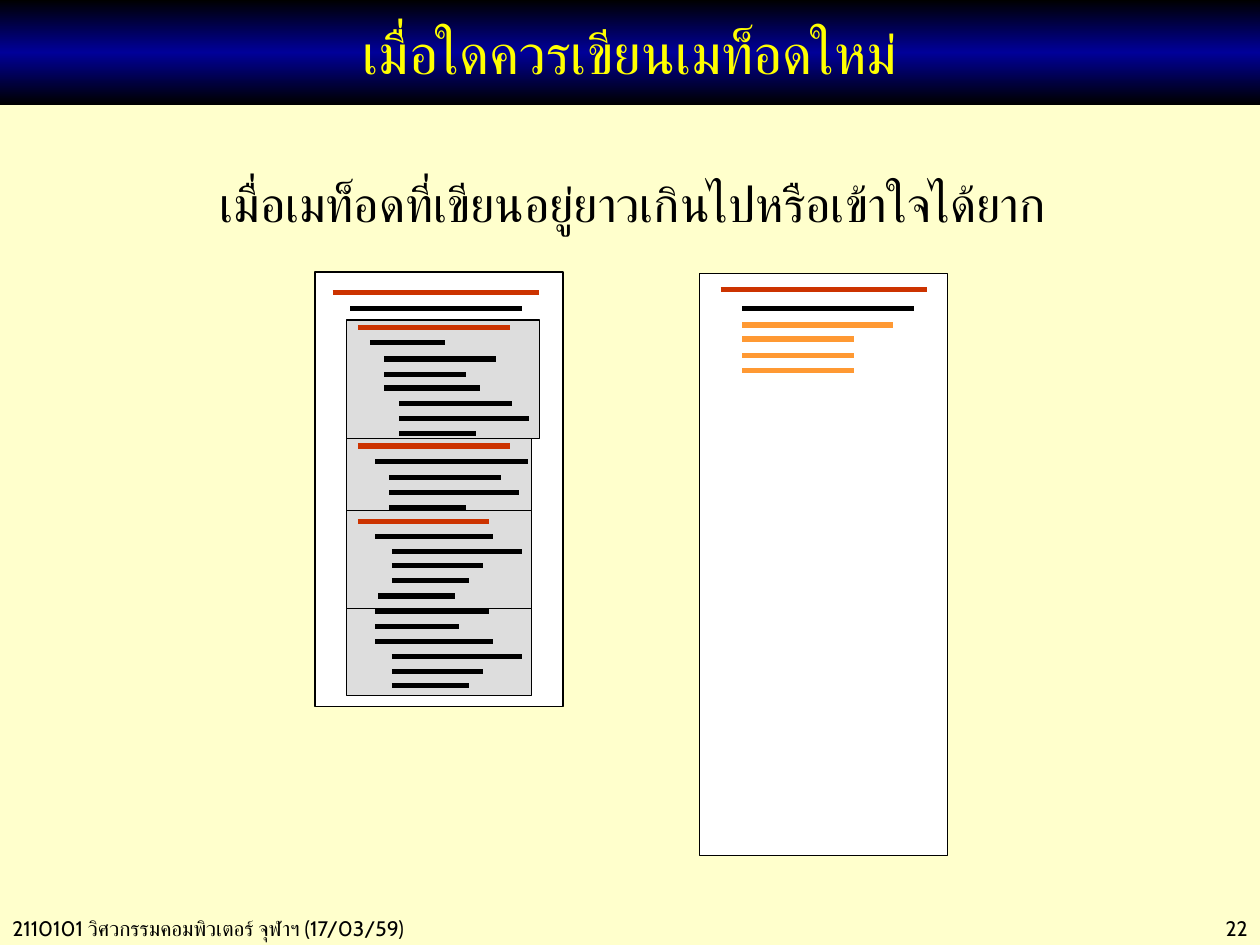
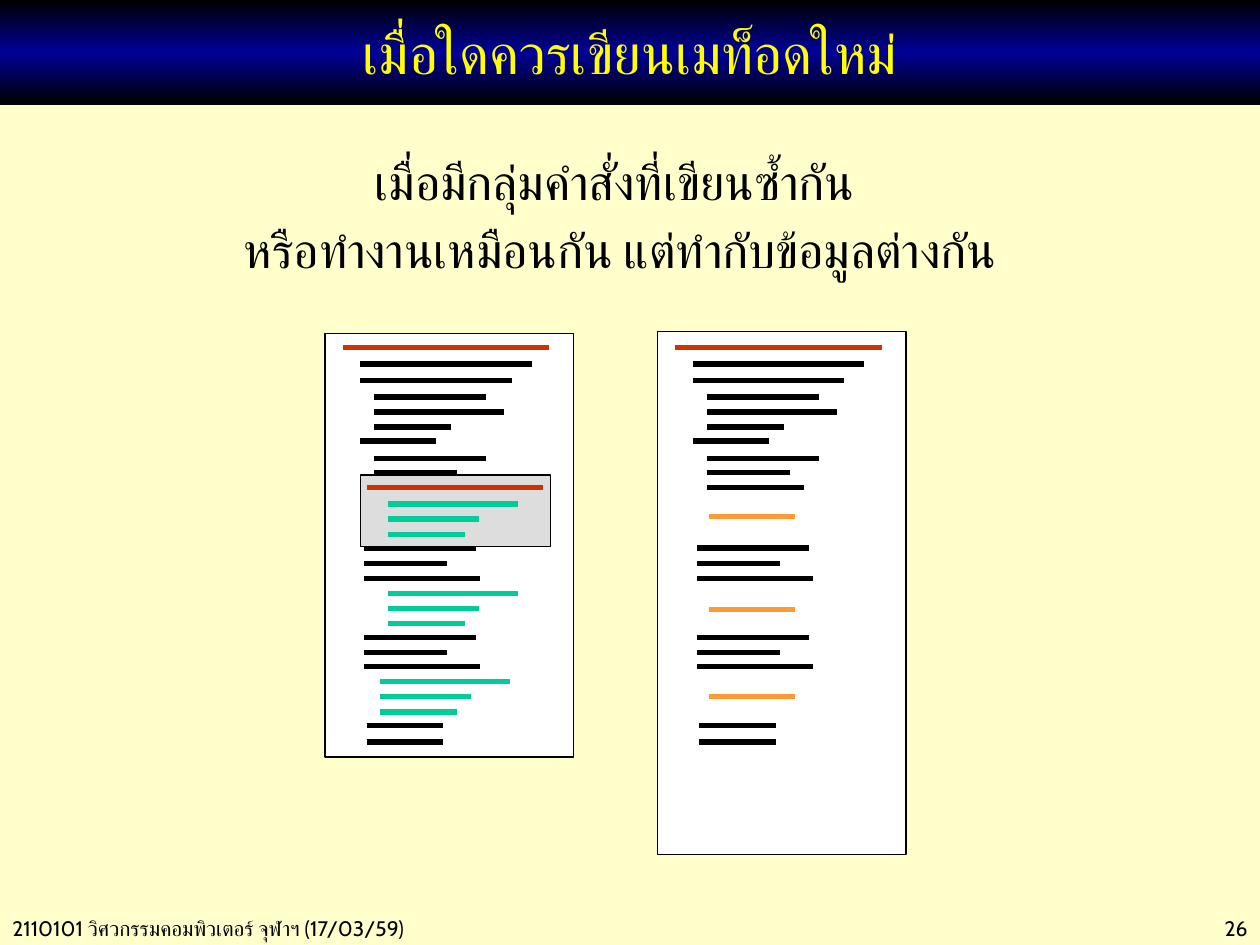
"""Build two slides on when to write a new method."""
from copy import deepcopy
from dataclasses import dataclass

from lxml.etree import SubElement
from pptx import Presentation
from pptx.dml.color import RGBColor
from pptx.enum.shapes import MSO_CONNECTOR, MSO_SHAPE
from pptx.enum.text import MSO_ANCHOR, PP_ALIGN
from pptx.oxml.ns import qn
from pptx.util import Emu, Pt

PX = 9144


@dataclass(frozen=True)
class Theme:
    font: str = "Cabin"
    title_size: int = 32
    body_size: int = 28
    footer_size: int = 12
    ground: str = "FFFFCC"
    title: str = "FFFF00"
    band_edge: str = "000000"
    band_middle: str = "000099"
    paper: str = "FFFFFF"
    block: str = "DDDDDD"
    code: str = "000000"
    header: str = "CC3300"
    call: str = "FF9933"
    repeat: str = "00CC99"


T = Theme()


def write(tf, lines, size, color, align):
    tf.word_wrap = True
    for i, text in enumerate(lines):
        p = tf.add_paragraph() if i else tf.paragraphs[0]
        p.alignment = align
        if i:
            p.space_before = Pt(size * 0.2)
        r = p.add_run()
        r.text = text
        r.font.name = T.font
        r.font.size = Pt(size)
        r.font.color.rgb = RGBColor.from_string(color)
        SubElement(r.font._element, qn("a:cs"), typeface=T.font)


def draw_code(s, box, fill, rows):
    sp = s.shapes.add_shape(MSO_SHAPE.RECTANGLE, *[Emu(v * PX) for v in box])
    sp.shadow.inherit = False
    sp.fill.solid()
    sp.fill.fore_color.rgb = RGBColor.from_string(fill)
    sp.line.color.rgb = RGBColor.from_string(T.code)
    sp.line.width = Pt(0.75)
    for color, bars in rows.items():
        for x, y, w in bars:
            ends = [Emu(v * PX) for v in (x, y, x + w, y)]
            c = s.shapes.add_connector(MSO_CONNECTOR.STRAIGHT, *ends)
            c.line.color.rgb = RGBColor.from_string(color)
            c.line.width = Pt(3)
            SubElement(c._element.spPr, qn("a:effectLst"))


long_method = [
    ((555, 217, 197, 462), T.paper, {
        T.header: [(572, 230, 164)],
        T.code: [(589, 245, 136)],
        T.call: [(589, 258, 120), (589, 269, 89), (589, 282, 89), (589, 294, 89)],
    }),
    ((250, 216, 197, 345), T.paper, {
        T.header: [(264, 232, 164)],
        T.code: [(278, 245, 136)],
    }),
    ((275, 345, 147, 70), T.block, {
        T.header: [(284, 354, 121)],
        T.code: [(298, 366, 121), (309, 379, 89), (309, 391, 103), (309, 403, 61)],
    }),
    ((275, 254, 153, 94), T.block, {
        T.header: [(284, 260, 121)],
        T.code: [(294, 272, 59), (305, 285, 89), (305, 297, 65), (305, 308, 76),
                 (317, 320, 89), (317, 332, 103), (317, 344, 61)],
    }),
    ((275, 464, 147, 88), T.block, {
        T.code: [(298, 485, 90), (298, 497, 66), (298, 509, 93),
                 (311, 521, 103), (311, 533, 72), (311, 544, 61)],
    }),
    ((275, 405, 147, 78), T.block, {
        T.header: [(284, 414, 104)],
        T.code: [(298, 426, 93), (311, 438, 103), (311, 449, 72),
                 (311, 461, 61), (300, 473, 61)],
    }),
]

shared_header = (272, 276, 164)
shared_code = [
    (286, 289, 136), (286, 302, 120), (297, 315, 89), (297, 327, 103),
    (297, 339, 61), (286, 350, 60), (297, 364, 89), (297, 375, 66),
    (289, 435, 89), (289, 447, 66), (289, 459, 92),
    (289, 506, 89), (289, 518, 66), (289, 529, 92),
    (291, 576, 61), (291, 589, 61),
]
page_step = 264
repeats = [[(x, y + i * 12, w) for i, w in enumerate((103, 72, 61))]
           for x, y in ((308, 400), (308, 471), (302, 541))]
repeated_code = [
    ((258, 265, 197, 336), T.paper, {
        T.header: [shared_header],
        T.code: shared_code,
        T.repeat: repeats[1] + repeats[2],
    }),
    ((258 + page_step, 263, 197, 415), T.paper, {
        T.header: [(shared_header[0] + page_step, *shared_header[1:])],
        T.code: [(x + page_step, y, w) for x, y, w in shared_code + [(297, 387, 77)]],
        T.call: [(563, y, 68) for y in (410, 484, 553)],
    }),
    ((286, 377, 151, 57), T.block, {
        T.header: [(291, 387, 140)],
        T.repeat: repeats[0],
    }),
]

slides = [
    ("22", (77, 133, 850, 81),
     ["เมื่อเมท็อดที่เขียนอยู่ยาวเกินไปหรือเข้าใจได้ยาก"], long_method),
    ("26", (67, 115, 850, 112),
     ["เมื่อมีกลุ่มคำสั่งที่เขียนซ้ำกัน ", "หรือทำงานเหมือนกัน แต่ทำกับข้อมูลต่างกัน"],
     repeated_code),
]

prs = Presentation()
prs.slide_width = Emu(1000 * PX)
prs.slide_height = Emu(750 * PX)
background = prs.slide_master.background.fill
background.solid()
background.fore_color.rgb = RGBColor.from_string(T.ground)

for number, body_box, body, blocks in slides:
    s = prs.slides.add_slide(prs.slide_layouts.get_by_name("Title Only"))

    title = s.shapes.title
    title.left, title.top = Emu(0), Emu(0)
    title.width, title.height = Emu(1000 * PX), Emu(83 * PX)
    title.fill.gradient()
    title.fill.gradient_angle = 90
    stops = title._element.spPr.find(".//" + qn("a:gsLst"))
    stops.append(deepcopy(stops[0]))
    band = ((0, T.band_edge), (0.5, T.band_middle), (1, T.band_edge))
    for stop, (position, color) in zip(title.fill.gradient_stops, band):
        stop.position = position
        stop.color.rgb = RGBColor.from_string(color)
    title.text_frame.vertical_anchor = MSO_ANCHOR.MIDDLE
    write(title.text_frame, ["เมื่อใดควรเขียนเมท็อดใหม่"], T.title_size, T.title,
          PP_ALIGN.CENTER)

    texts = [
        ((0, 722, 390, 30), ["2110101 วิศวกรรมคอมพิวเตอร์ จุฬาฯ (17/03/59)"],
         T.footer_size, PP_ALIGN.LEFT),
        ((862, 722, 138, 30), [number], T.footer_size, PP_ALIGN.RIGHT),
        (body_box, body, T.body_size, PP_ALIGN.CENTER),
    ]
    for box, lines, size, align in texts:
        tb = s.shapes.add_textbox(*[Emu(v * PX) for v in box])
        write(tb.text_frame, lines, size, T.code, align)

    for box, fill, rows in blocks:
        draw_code(s, box, fill, rows)

prs.save("out.pptx")
